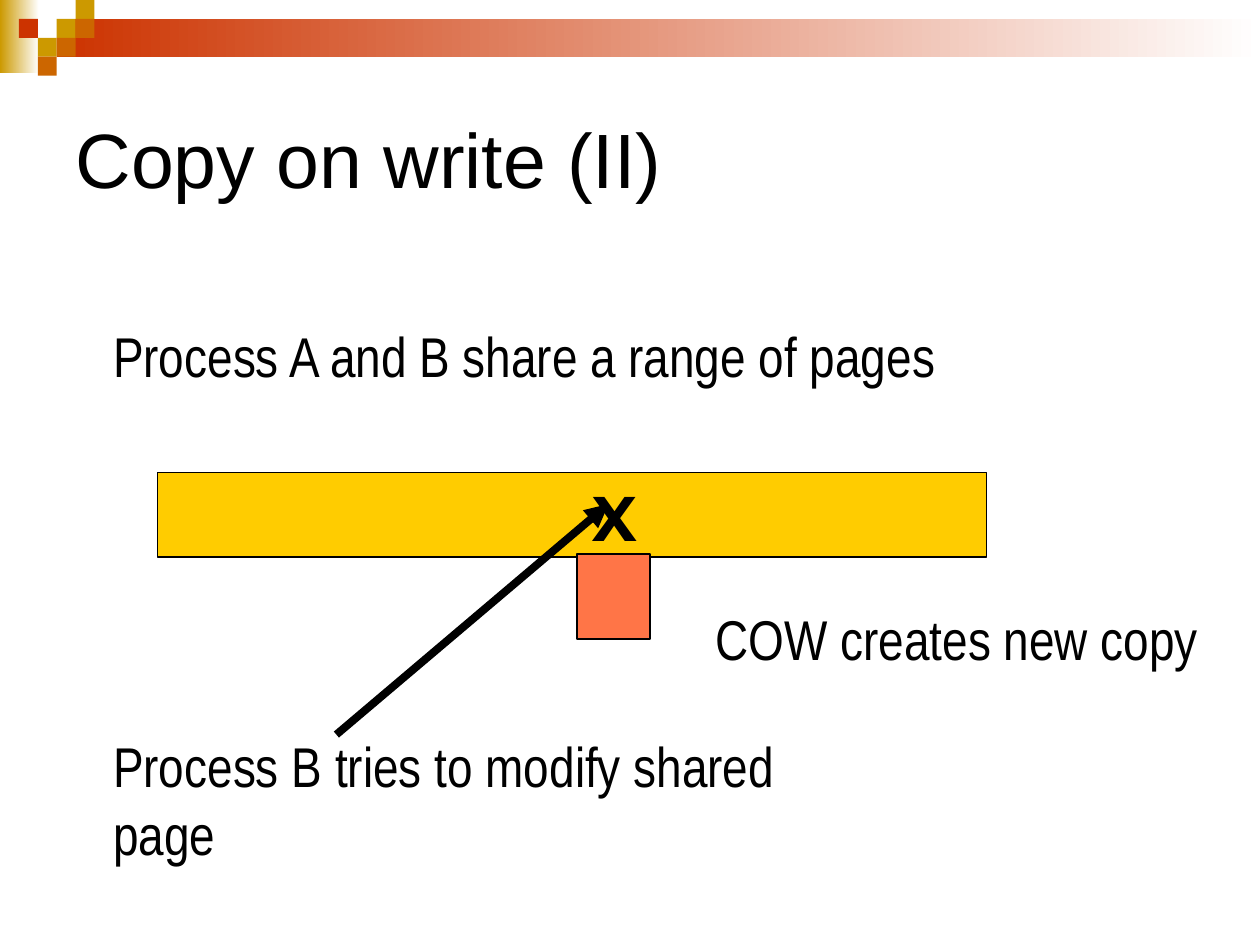
import pptx
import pptx.dml.color
import pptx.enum.shapes
import pptx.enum.text
import pptx.oxml
import pptx.oxml.ns
import pptx.util

Inches, Pt = pptx.util.Inches, pptx.util.Pt
ALIGN = pptx.enum.text.PP_ALIGN
ANCHOR = pptx.enum.text.MSO_ANCHOR

W, H = 10, 7.5
TILE = 0.15
BLACK, WHITE = "000000", "FFFFFF"
GOLD, ORANGE, RED = "CC9900", "CC6600", "CC3300"
# Header tiles: column, row, colour
TILES = [(3, 1, GOLD), (4, 0, GOLD), (4, 1, ORANGE), (2, 2, GOLD),
         (1, 1, RED), (3, 2, ORANGE), (2, 3, ORANGE)]


def rgb(value):
    return pptx.dml.color.RGBColor.from_string(value)


def box(*lengths):
    return [Inches(n) for n in lengths]


def write(tf, text, size=32, font="Arial Narrow", color=BLACK, bold=False,
          align=ALIGN.LEFT, anchor=ANCHOR.TOP):
    tf.word_wrap = True
    tf.vertical_anchor = anchor
    p = tf.paragraphs[0]
    p.alignment = align
    r = p.add_run()
    r.text = text
    r.font.size, r.font.name, r.font.bold = Pt(size), font, bold
    r.font.color.rgb = rgb(color)


def add_label(s, at, text, **fmt):
    write(s.shapes.add_textbox(*box(*at)).text_frame, text, **fmt)


def add_rect(s, at, color, fade_to=None, line=None):
    sp = s.shapes.add_shape(pptx.enum.shapes.MSO_SHAPE.RECTANGLE, *box(*at))
    sp.shadow.inherit = False
    if fade_to:
        sp.fill.gradient()
        sp.fill.gradient_angle = 0
        for stop, value in zip(sp.fill.gradient_stops, (color, fade_to)):
            stop.color.rgb = rgb(value)
    else:
        sp.fill.solid()
        sp.fill.fore_color.rgb = rgb(color)
    if line:
        sp.line.color.rgb = rgb(line)
        sp.line.width = Pt(1)
    else:
        sp.line.fill.background()


def add_arrow(s, start, end, width, color=BLACK):
    sp = s.shapes.add_connector(pptx.enum.shapes.MSO_CONNECTOR.STRAIGHT,
                                *box(*start, *end))
    sp.line.color.rgb = rgb(color)
    sp.line.width = Pt(width)
    head = pptx.oxml.parse_xml(
        f'<a:tailEnd {pptx.oxml.ns.nsdecls("a")} type="triangle"/>')
    sp.line._get_or_add_ln().append(head)
    effects = pptx.oxml.parse_xml(f'<a:effectLst {pptx.oxml.ns.nsdecls("a")}/>')
    sp._element.spPr.append(effects)


def add_header(s):
    add_rect(s, (0, 0, 0.31, 0.58), GOLD, fade_to=WHITE)
    add_rect(s, (3 * TILE, TILE, W - 3 * TILE, 2 * TILE), RED, fade_to=WHITE)
    for col, row, color in TILES:
        add_rect(s, (col * TILE, row * TILE, TILE, TILE), color)


def add_title(s, text):
    sp = s.shapes.title
    sp.left, sp.top, sp.width, sp.height = box(0.5, 0.5, 9, 1.5)
    write(sp.text_frame, text, size=44, font="Arial", anchor=ANCHOR.MIDDLE)


def main():
    prs = pptx.Presentation()
    prs.slide_width, prs.slide_height = box(W, H)
    s = prs.slides.add_slide(prs.slide_layouts[5])

    add_header(s)
    add_title(s, "Copy on write (II)")

    # The two processes
    add_label(s, (0.8, 2.5, 6.87, 0.63), "Process A and B share a range of pages")
    add_label(s, (0.8, 5.76, 6.2, 1.15), "Process B tries to modify shared page")

    # Shared range and the new page
    add_rect(s, (1.25, 3.75, 6.58, 0.67), "FFCC00", line=BLACK)
    add_rect(s, (4.58, 4.4, 0.58, 0.67), "FF7547", line=BLACK)
    add_label(s, (5.58, 4.75, 4.11, 0.63), "COW creates new copy")

    # Attempted write to the shared page
    add_arrow(s, (2.67, 5.83), (4.83, 4), 4.5)
    add_label(s, (4.5, 3.75, 0.75, 0.7), "X", size=36, font="Montserrat",
              bold=True, align=ALIGN.CENTER)

    prs.save("out.pptx")


if __name__ == "__main__":
    main()
